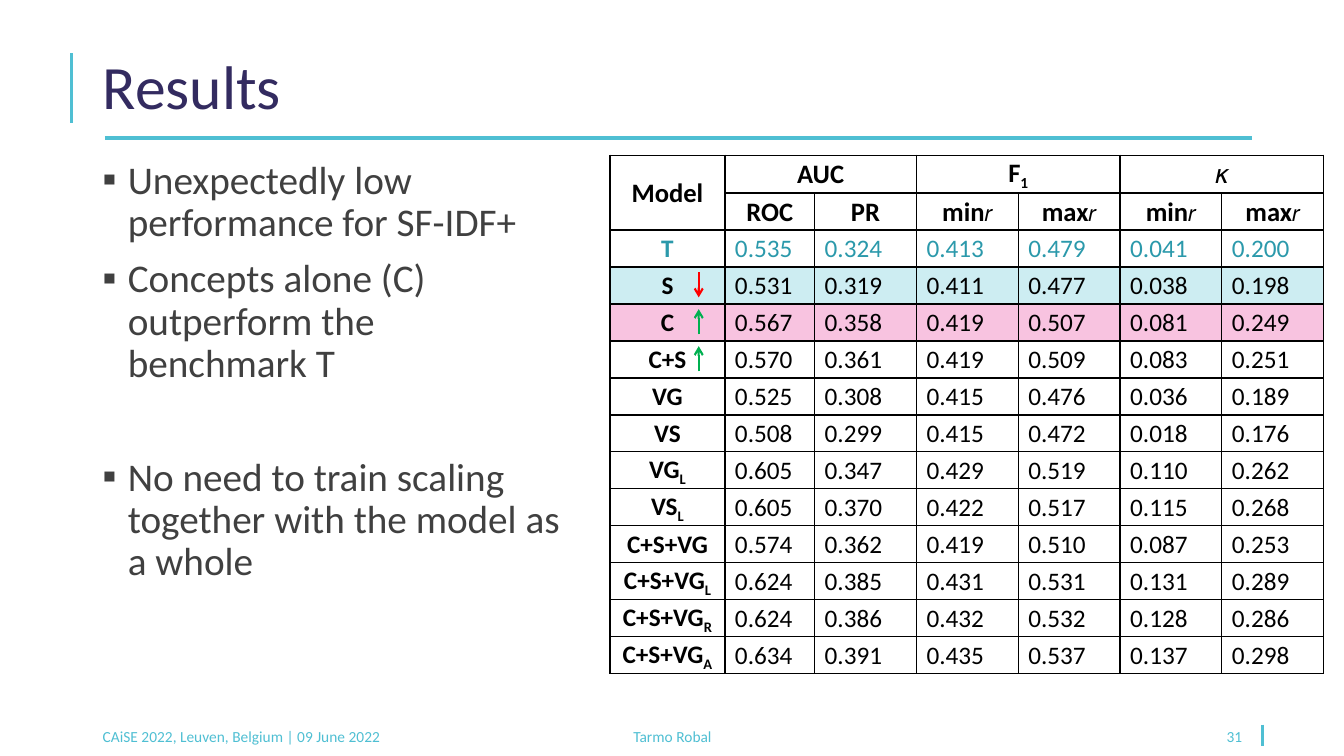
from pptx import Presentation
from pptx import util as u
from pptx.dml.color import RGBColor
from pptx.enum import shapes, text
from pptx.oxml.ns import qn
from lxml import etree

THEME = {
    "font": "Calibri",
    "accent": "4FBFD3", "title": "332B60", "body": "404040",
    "ink": "000000", "benchmark": "2B99AB", "pink": "E4067E",
    "worse": "FF0000", "better": "00B050",
    "title_size": 44, "body_size": 28, "footer_size": 11,
    "header_size": 19, "value_size": 18, "math_size": 16,
}

TITLE = "Results"
# (text, space before in points)
FINDINGS = [
    ("Unexpectedly low performance for SF-IDF+", 10),
    ("Concepts alone (C) outperform the\vbenchmark T", 10),
    ("No need to train scaling together with the model as a whole", 51),
]
# (text, left, width, alignment)
FOOTERS = [
    ("CAiSE 2022, Leuven, Belgium | 09 June 2022", 0.92, 3.31, text.PP_ALIGN.LEFT),
    ("Tarmo Robal", 4.42, 4.5, text.PP_ALIGN.CENTER),
    ("31", 9.42, 3, text.PP_ALIGN.RIGHT),
]
RULES = [(0.71, 0.53, 0.71, 1.22), (12.52, 7.19, 12.52, 7.4), (1.04, 1.37, 12.42, 1.37)]

# An underscore starts a subscript, or a small math symbol when 𝑟 follows.
HEADERS = [
    ["Model", "AUC", "", "F_1", "", "𝜅", ""],
    ["", "ROC", "PR", "min_𝑟", "max_𝑟", "min_𝑟", "max_𝑟"],
]
SCORES = [
    ["T", "0.535", "0.324", "0.413", "0.479", "0.041", "0.200"],
    ["S", "0.531", "0.319", "0.411", "0.477", "0.038", "0.198"],
    ["C", "0.567", "0.358", "0.419", "0.507", "0.081", "0.249"],
    ["C+S", "0.570", "0.361", "0.419", "0.509", "0.083", "0.251"],
    ["VG", "0.525", "0.308", "0.415", "0.476", "0.036", "0.189"],
    ["VS", "0.508", "0.299", "0.415", "0.472", "0.018", "0.176"],
    ["VG_L", "0.605", "0.347", "0.429", "0.519", "0.110", "0.262"],
    ["VS_L", "0.605", "0.370", "0.422", "0.517", "0.115", "0.268"],
    ["C+S+VG", "0.574", "0.362", "0.419", "0.510", "0.087", "0.253"],
    ["C+S+VG_L", "0.624", "0.385", "0.431", "0.531", "0.131", "0.289"],
    ["C+S+VG_R", "0.624", "0.386", "0.432", "0.532", "0.128", "0.286"],
    ["C+S+VG_A", "0.634", "0.391", "0.435", "0.537", "0.137", "0.298"],
]
MERGES = [((0, 0), (1, 0)), ((0, 1), (0, 2)), ((0, 3), (0, 4)), ((0, 5), (0, 6))]
ROW_TINTS = {"S": ("accent", 28), "C": ("pink", 24)}  # colour, opacity in percent
TRENDS = {"S": "worse", "C": "better", "C+S": "better"}

TABLE_LEFT, TABLE_TOP, TABLE_HEIGHT = 6.05, 1.54, 5.14
COLUMN_WIDTHS = [1.14, 0.89] + [1.01] * 5
ROW_HEIGHT = TABLE_HEIGHT / (len(HEADERS) + len(SCORES))
ARROW_X, ARROW_LENGTH = 6.93, 0.25


def color(name):
    return RGBColor.from_string(THEME[name])


def style_span(span, size, ink, bold=False):
    span.font.name = THEME["font"]
    span.font.size = u.Pt(THEME[size])
    span.font.color.rgb = color(ink)
    span.font.bold = bold


def add_text(page, lines, place, size, ink, anchor, align=text.PP_ALIGN.LEFT):
    box = page.shapes.add_textbox(*map(u.Inches, place))
    frame = box.text_frame
    frame.word_wrap = True
    frame.vertical_anchor = anchor
    frame.text = "\n".join(lines)
    for para in frame.paragraphs:
        para.alignment = align
        for span in para.runs:
            style_span(span, size, ink)
    return frame


def add_line(page, ends, ink, width):
    line = page.shapes.add_connector(
        shapes.MSO_CONNECTOR.STRAIGHT, *map(u.Inches, ends))
    line.line.color.rgb = color(ink)
    line.line.width = u.Pt(width)
    etree.SubElement(line._element.spPr, qn("a:effectLst"))
    return line


def add_findings(page):
    frame = add_text(page, [line for line, _ in FINDINGS], (0.92, 1.54, 5, 5.53),
                     "body_size", "body", text.MSO_ANCHOR.TOP)
    for para, (_, gap) in zip(frame.paragraphs, FINDINGS):
        para.line_spacing = 0.9
        para.space_before = u.Pt(gap)
        props = para._p.get_or_add_pPr()
        props.set("marL", str(u.Inches(0.25)))
        props.set("indent", str(u.Inches(-0.25)))
        etree.SubElement(props, qn("a:buFont"), typeface=THEME["font"])
        etree.SubElement(props, qn("a:buChar"), char="▪")


def add_borders(cell):
    props = cell._tc.get_or_add_tcPr()
    for position, side in enumerate(("lnL", "lnR", "lnT", "lnB")):
        border = etree.Element(qn(f"a:{side}"), w=str(u.Pt(1)))
        fill = etree.SubElement(border, qn("a:solidFill"))
        etree.SubElement(fill, qn("a:srgbClr"), val=THEME["ink"])
        props.insert(position, border)


def tint(cell, model):
    if model not in ROW_TINTS:
        cell.fill.background()
        return
    name, opacity = ROW_TINTS[model]
    cell.fill.solid()
    cell.fill.fore_color.rgb = color(name)
    paint = cell._tc.tcPr.find(".//" + qn("a:srgbClr"))
    etree.SubElement(paint, qn("a:alpha"), val=str(opacity * 1000))


def write_cell(cell, label, size, ink, bold):
    cell.margin_left = cell.margin_right = u.Inches(0.1)
    cell.margin_top = cell.margin_bottom = 0
    cell.vertical_anchor = text.MSO_ANCHOR.MIDDLE
    para = cell.text_frame.paragraphs[0]
    para.alignment = text.PP_ALIGN.CENTER if bold else text.PP_ALIGN.LEFT
    para.line_spacing = 1.05
    main, _, suffix = label.partition("_")
    for part in filter(None, (main, suffix)):
        span = para.add_run()
        span.text = part
        style_span(span, "math_size" if part == "𝑟" else size, ink, bold)
    if suffix and suffix != "𝑟":
        span._r.get_or_add_rPr().set("baseline", "-25000")


def add_score_table(page):
    rows = HEADERS + SCORES
    table = page.shapes.add_table(
        len(rows), len(COLUMN_WIDTHS), u.Inches(TABLE_LEFT), u.Inches(TABLE_TOP),
        u.Inches(sum(COLUMN_WIDTHS)), u.Inches(TABLE_HEIGHT)).table
    table.first_row = table.horz_banding = False
    for column, width in zip(table.columns, COLUMN_WIDTHS):
        column.width = u.Inches(width)
    for r, labels in enumerate(rows):
        table.rows[r].height = u.Inches(ROW_HEIGHT)
        header = r < len(HEADERS)
        ink = "benchmark" if labels[0] == "T" else "ink"
        for c, label in enumerate(labels):
            cell = table.cell(r, c)
            write_cell(cell, label, "header_size" if header else "value_size",
                       ink, header or c == 0)
            tint(cell, labels[0])
            add_borders(cell)
    for first, last in MERGES:
        table.cell(*first).merge(table.cell(*last))


def add_trend_arrows(page):
    for r, labels in enumerate(SCORES, len(HEADERS)):
        trend = TRENDS.get(labels[0])
        if not trend:
            continue
        middle = TABLE_TOP + (r + 0.5) * ROW_HEIGHT
        reach = ARROW_LENGTH / 2 if trend == "worse" else -ARROW_LENGTH / 2
        arrow = add_line(page, (ARROW_X, middle - reach, ARROW_X, middle + reach),
                         trend, 1.5)
        etree.SubElement(arrow.line._get_or_add_ln(), qn("a:tailEnd"), type="arrow")


def main():
    deck = Presentation()
    deck.slide_width, deck.slide_height = u.Inches(13.33), u.Inches(7.5)
    page = deck.slides.add_slide(deck.slide_layouts[6])
    for ends in RULES:
        add_line(page, ends, "accent", 2.25)
    add_score_table(page)
    title = add_text(page, [TITLE], (0.92, 0.4, 11.5, 0.97), "title_size", "title",
                     text.MSO_ANCHOR.MIDDLE)
    title.paragraphs[0].line_spacing = 0.9
    add_findings(page)
    for label, left, width, align in FOOTERS:
        add_text(page, [label], (left, 7.19, width, 0.23), "footer_size", "accent",
                 text.MSO_ANCHOR.MIDDLE, align)
    add_trend_arrows(page)
    deck.save("out.pptx")


if __name__ == "__main__":
    main()
